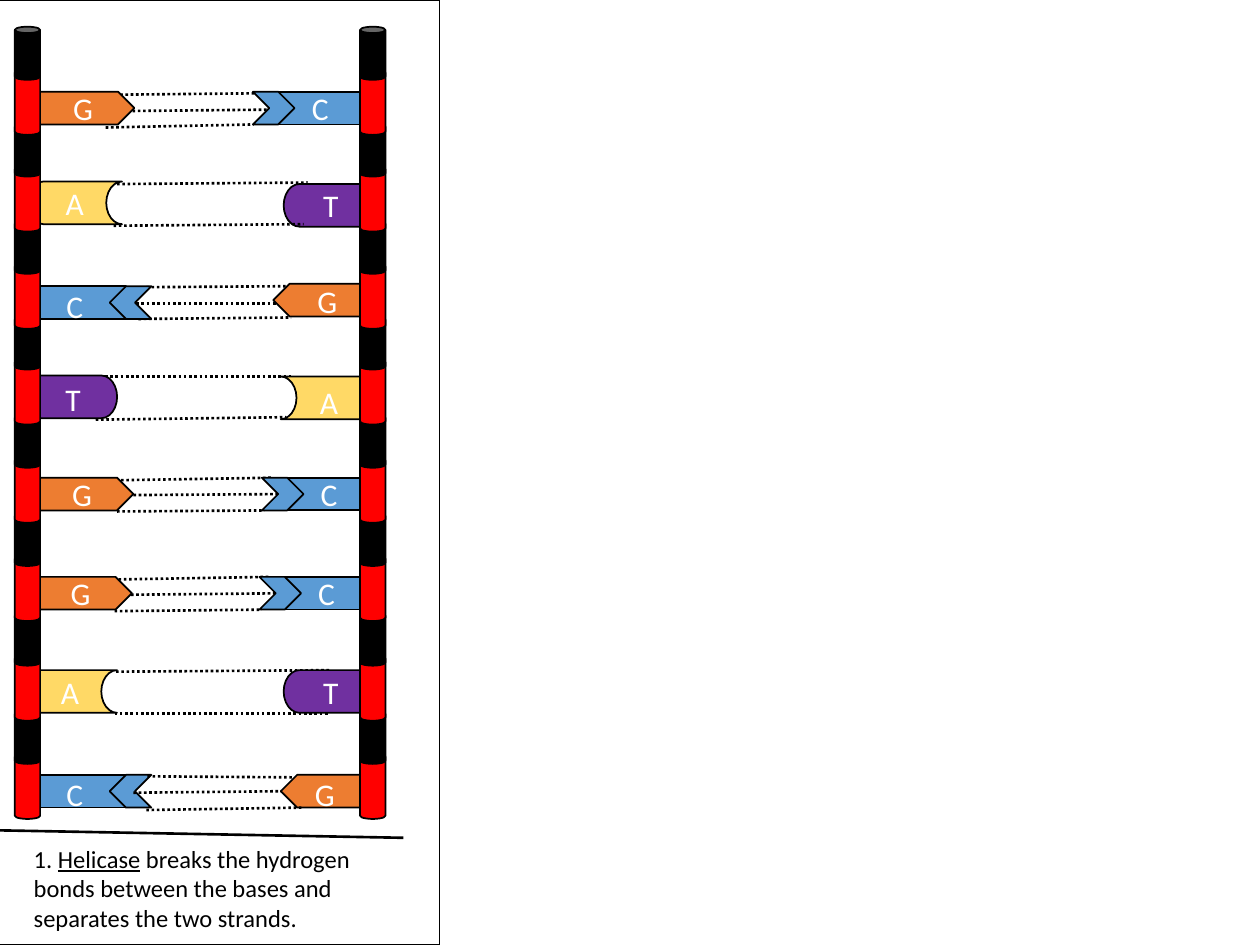
import pptx
import pptx.dml.color
import pptx.enum.dml
import pptx.enum.shapes
import pptx.enum.text
import pptx.oxml.ns
import pptx.util
from lxml import etree

Cm, Pt = pptx.util.Cm, pptx.util.Pt
SHAPE = pptx.enum.shapes.MSO_SHAPE

COLORS = {
    "ink": "000000", "paper": "FFFFFF", "backbone": "FF0000",
    "A": "FFD966", "T": "7030A0", "G": "ED7D31", "C": "5B9BD5",
}
# Base letter: preset shape, width, height
BASES = {
    "A": (SHAPE.FLOWCHART_STORED_DATA, 1.9, 0.86),
    "T": (SHAPE.FLOWCHART_STORED_DATA, 1.9, 0.86),
    "G": (SHAPE.PENTAGON, 1.9, 0.66),
    "C": (SHAPE.RECTANGLE, 1.73, 0.66),
}
STRAND_LEFTS = (0.3, 7.26)

# Each rung: top, its two bases, its bonds, and whether the bonds lie in front.
# A base is letter, x, y; a turned base also has the x, y of its label.
# A bond is x1, y1, x2, y2. All y values count from the top of the rung.
RUNGS = [
    (1.40, [("G", 0.81, 0.45), ("C", 5.59, 0.45)],
     [(2.21, 0.51, 5.28, 0.48), (2.13, 1.17, 5.11, 1.11), (2.46, 0.84, 5.44, 0.81)], False),
    (3.35, [("A", 0.56, 0.31), ("T", 5.72, 0.36)],
     [(2.36, 0.36, 6.20, 0.33), (2.29, 1.20, 6.12, 1.17)], True),
    (5.31, [("C", 0.81, 0.46, 1.09, 0.35), ("G", 5.51, 0.41, 6.15, 0.25)],
     [(2.95, 0.48, 5.92, 0.46), (2.79, 1.12, 5.87, 1.09), (2.64, 0.81, 5.64, 0.81)], False),
    (7.24, [("T", 0.46, 0.33, 1.07, 0.30), ("A", 5.66, 0.35, 6.20, 0.35)],
     [(2.01, 0.35, 5.87, 0.35), (1.93, 1.22, 5.77, 1.17)], False),
    (9.22, [("G", 0.79, 0.41), ("C", 5.77, 0.41)],
     [(2.44, 0.46, 5.51, 0.41), (2.36, 1.09, 5.33, 1.07), (2.69, 0.76, 5.66, 0.74)], False),
    (11.20, [("G", 0.76, 0.43), ("C", 5.72, 0.43)],
     [(2.39, 0.48, 5.44, 0.43), (2.31, 1.12, 5.28, 1.09), (2.64, 0.79, 5.61, 0.76)], False),
    (13.21, [("A", 0.46, 0.30), ("T", 5.72, 0.30)],
     [(2.34, 0.33, 6.65, 0.30), (2.31, 1.17, 6.65, 1.17)], False),
    (15.19, [("C", 0.81, 0.43, 1.09, 0.30), ("G", 5.66, 0.43, 6.10, 0.30)],
     [(2.97, 0.46, 5.89, 0.48), (2.95, 1.14, 6.10, 1.09), (2.69, 0.79, 5.66, 0.76)], True),
]


def rgb(name):
    return pptx.dml.color.RGBColor.from_string(COLORS[name])


def add_run(p, text, size, color, underline=None):
    r = p.add_run()
    r.text = text
    r.font.name = "Calibri"
    r.font.size = Pt(size)
    r.font.color.rgb = rgb(color)
    r.font.underline = underline


def add_outlined(s, kind, x, y, w, h, color, turned=False):
    sp = s.shapes.add_shape(kind, Cm(x), Cm(y), Cm(w), Cm(h))
    sp.shadow.inherit = False
    sp.fill.solid()
    sp.fill.fore_color.rgb = rgb(color)
    sp.line.color.rgb = rgb("ink")
    sp.line.width = Pt(1)
    sp.rotation = 180 if turned else 0
    return sp


def add_line(s, x1, y1, x2, y2, dash=None):
    line = s.shapes.add_connector(pptx.enum.shapes.MSO_CONNECTOR.STRAIGHT,
                                  Cm(x1), Cm(y1), Cm(x2), Cm(y2))
    line.line.color.rgb = rgb("ink")
    line.line.width = Pt(1.5)
    line.line.dash_style = dash
    etree.SubElement(line._element.spPr, pptx.oxml.ns.qn("a:effectLst"))


def add_text_box(s, x, y, w, h):
    """Add a wrapping text box and return its first paragraph."""
    tf = s.shapes.add_textbox(Cm(x), Cm(y), Cm(w), Cm(h)).text_frame
    tf.word_wrap = True
    tf.auto_size = pptx.enum.text.MSO_AUTO_SIZE.SHAPE_TO_FIT_TEXT
    return tf.paragraphs[0]


def add_base(s, left, top, letter, x, y, *label):
    """Draw one base; one with a label position is turned to face the other way."""
    kind, w, h = BASES[letter]
    turned = bool(label)
    sp = add_outlined(s, kind, left + x, top + y, w, h, letter, turned)
    if letter == "C":
        notch = 1.4 if turned else -0.49
        add_outlined(s, SHAPE.CHEVRON, left + x + notch, top + y, 0.84, h, letter, turned)
    if turned:
        p = add_text_box(s, left + label[0], top + label[1], 1.02, 0.91)
    else:
        sp.text_frame.vertical_anchor = pptx.enum.text.MSO_ANCHOR.MIDDLE
        p = sp.text_frame.paragraphs[0]
        p.alignment = pptx.enum.text.PP_ALIGN.CENTER
    add_run(p, letter, 18, "paper")


def add_bonds(s, left, top, bonds):
    for x1, y1, x2, y2 in bonds:
        add_line(s, left + x1, top + y1, left + x2, top + y2,
                 pptx.enum.dml.MSO_LINE.ROUND_DOT)


def add_rung(s, left, top, bases, bonds, bonds_in_front):
    if not bonds_in_front:
        add_bonds(s, left, top, bonds)
    for base in bases:
        add_base(s, left, top, *base)
    for x in STRAND_LEFTS:
        add_outlined(s, SHAPE.CAN, left + x, top, 0.51, 1.32, "backbone")
        add_outlined(s, SHAPE.CAN, left + x, top - 0.86, 0.51, 1.07, "ink")
    if bonds_in_front:
        add_bonds(s, left, top, bonds)


def add_caption(s, left, top, width, height):
    add_line(s, left, top, left + 8.13, top + 0.15)
    p = add_text_box(s, left + 0.43, top + 0.15, width, height)
    add_run(p, "1. ", 14, "ink")
    add_run(p, "Helicase", 14, "ink", underline=True)
    add_run(p, " breaks the hydrogen bonds between the bases and "
               "separates the two strands.", 14, "ink")


def main():
    prs = pptx.Presentation()
    prs.slide_width, prs.slide_height = Cm(25.4), Cm(19.05)
    s = prs.slides.add_slide(prs.slide_layouts[6])
    add_outlined(s, SHAPE.RECTANGLE, -0.03, 0, 8.89, 19.05, "paper")
    # Bottom to top, so that each backbone segment overlaps the one below
    for top, bases, bonds, bonds_in_front in reversed(RUNGS):
        add_rung(s, 0, top, bases, bonds, bonds_in_front)
    add_caption(s, 0, 16.74, 7.32, 2.06)
    prs.save("out.pptx")


if __name__ == "__main__":
    main()
